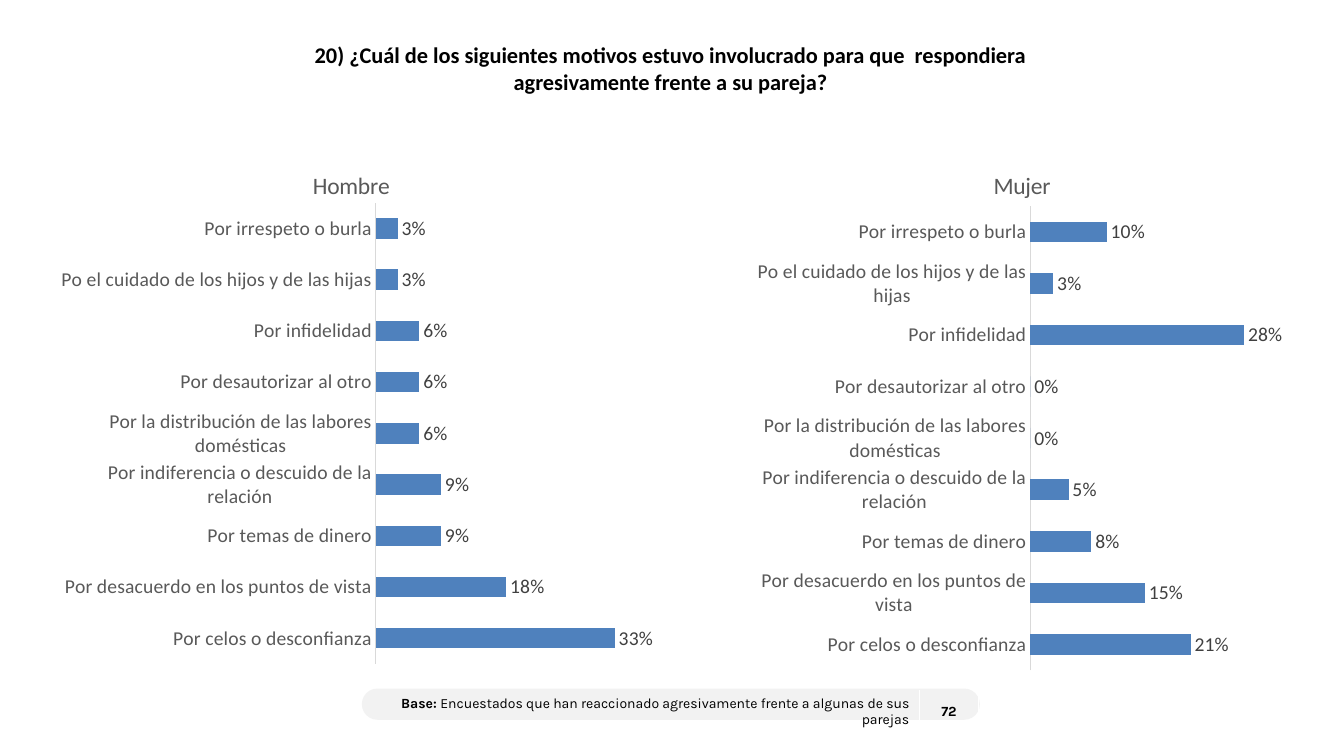
import dataclasses

import lxml.etree
import pptx
import pptx.chart.data
import pptx.dml.color
import pptx.enum.chart
import pptx.enum.shapes
import pptx.enum.text
import pptx.oxml
import pptx.oxml.ns
import pptx.util

Pt = pptx.util.Pt
qn = pptx.oxml.ns.qn
ALIGN = pptx.enum.text.PP_ALIGN

REASONS = (
    "Por celos o desconfianza",
    "Por desacuerdo en los puntos de vista",
    "Por temas de dinero",
    "Por indiferencia o descuido de la relación",
    "Por la distribución de las labores domésticas",
    "Por desautorizar al otro",
    "Por infidelidad",
    "Po el cuidado de los hijos y de las hijas",
    "Por irrespeto o burla",
)


@dataclasses.dataclass
class GenderChart:
    name: str
    left: float
    width: float
    values: tuple[float, ...]
    axis_max: float
    plot: tuple[float, float, float, float]  # x, y, w, h as shares of the chart


CHARTS = (
    GenderChart("Hombre", 30.2, 441.4,
                (0.33, 0.18, 0.09, 0.09, 0.06, 0.06, 0.06, 0.03, 0.03),
                0.35, (0.54, 0.1, 0.41, 0.86)),
    GenderChart("Mujer", 530.6, 398.9,
                (0.21, 0.15, 0.08, 0.05, 0, 0, 0.28, 0.03, 0.1),
                0.3, (0.515, 0.106, 0.41, 0.866)),
)


def rgb(value: str) -> pptx.dml.color.RGBColor:
    return pptx.dml.color.RGBColor.from_string(value)


def set_font(font, name: str, size: float, color: str, bold: bool = False) -> None:
    font.name = name
    font.size = Pt(size)
    font.bold = bold
    font.color.rgb = rgb(color)


def set_plot_layout(chart, plot: tuple[float, float, float, float]) -> None:
    """Fix the inner plot area at the given shares of the chart."""
    area = chart._chartSpace.chart.plotArea
    for old in area.findall(qn("c:layout")):
        area.remove(old)
    layout = lxml.etree.Element(qn("c:layout"))
    manual = lxml.etree.SubElement(layout, qn("c:manualLayout"))
    settings = [("layoutTarget", "inner"), ("xMode", "edge"), ("yMode", "edge")]
    settings += zip("xywh", map(str, plot))
    for tag, value in settings:
        lxml.etree.SubElement(manual, qn("c:" + tag)).set("val", value)
    area.insert(0, layout)


def add_gender_chart(s, spec_: GenderChart) -> None:
    data = pptx.chart.data.CategoryChartData(number_format="0%")
    data.categories = REASONS
    data.add_series(spec_.name, spec_.values)
    chart = s.shapes.add_chart(
        pptx.enum.chart.XL_CHART_TYPE.BAR_CLUSTERED,
        Pt(spec_.left), Pt(106.6), Pt(spec_.width), Pt(383), data).chart
    set_font(chart.font, "Calibri", 14, "000000")
    chart.has_legend = False

    chart.has_title = True
    chart.chart_title.include_in_layout = False
    p = chart.chart_title.text_frame.paragraphs[0]
    p.text = spec_.name
    set_font(p.runs[0].font, "Calibri", 16.8, "595959")

    reasons = chart.category_axis
    reasons.major_tick_mark = pptx.enum.chart.XL_TICK_MARK.NONE
    reasons.format.line.color.rgb = rgb("D9D9D9")
    reasons.format.line.width = Pt(0.75)
    set_font(reasons.tick_labels.font, "Calibri", 14, "595959")

    shares = chart.value_axis
    shares.visible = False
    shares.has_major_gridlines = False
    shares.minimum_scale = 0
    shares.maximum_scale = spec_.axis_max

    plot = chart.plots[0]
    plot.gap_width = 150
    plot.vary_by_categories = False
    fill = plot.series[0].format.fill
    fill.solid()
    fill.fore_color.rgb = rgb("4F81BD")
    plot.has_data_labels = True
    labels = plot.data_labels
    labels.show_value = True
    labels.number_format = "0%"
    labels.number_format_is_linked = False
    labels.position = pptx.enum.chart.XL_LABEL_POSITION.OUTSIDE_END
    set_font(labels.font, "Calibri", 14, "404040")
    set_plot_layout(chart, spec_.plot)


def set_borders(cell, white_sides: str) -> None:
    """Draw white lines on the listed sides and none on the others."""
    props = cell._tc.get_or_add_tcPr()
    for side in "LRTB":
        line = lxml.etree.SubElement(props, qn("a:ln" + side), w=str(Pt(1)))
        if side in white_sides:
            solid = lxml.etree.SubElement(line, qn("a:solidFill"))
            lxml.etree.SubElement(solid, qn("a:srgbClr"), val="FFFFFF")
        else:
            lxml.etree.SubElement(line, qn("a:noFill"))


def add_title(s) -> None:
    sp = s.shapes.title
    sp.left, sp.top, sp.width, sp.height = Pt(200), Pt(26), Pt(558), Pt(46)
    tf = sp.text_frame
    tf.text = ("20) ¿Cuál de los siguientes motivos estuvo involucrado para que  "
               "respondiera agresivamente frente a su pareja?")
    tf.word_wrap = True
    tf.auto_size = pptx.enum.text.MSO_AUTO_SIZE.NONE
    tf.vertical_anchor = pptx.enum.text.MSO_ANCHOR.TOP
    p = tf.paragraphs[0]
    p.alignment = ALIGN.CENTER
    set_font(p.runs[0].font, "Calibri", 16, "000000", True)


def add_footer(s) -> None:
    pill = s.shapes.add_shape(pptx.enum.shapes.MSO_SHAPE.ROUNDED_RECTANGLE,
                              Pt(258.5), Pt(491.8), Pt(441.4), Pt(22.3))
    pill.adjustments[0] = 0.5
    pill.shadow.inherit = False
    pill.fill.solid()
    pill.fill.fore_color.rgb = rgb("F2F2F2")
    pill.line.fill.background()

    widths = (388.8, 42.5)
    table = s.shapes.add_table(1, 2, Pt(267.8), Pt(493.2),
                               Pt(sum(widths)), Pt(19.4)).table
    table.first_row = table.horz_banding = False
    for column, width in zip(table.columns, widths):
        column.width = Pt(width)

    base, page = table.cell(0, 0), table.cell(0, 1)
    base_runs = (("Base: ", True),
                 ("Encuestados que han reaccionado agresivamente frente "
                  "a algunas de sus parejas", False))
    for cell, runs, align, sides in ((base, base_runs, ALIGN.RIGHT, "R"),
                                     (page, (("72", True),), ALIGN.CENTER, "LR")):
        set_borders(cell, sides)
        cell.fill.background()
        cell.vertical_anchor = pptx.enum.text.MSO_ANCHOR.MIDDLE
        p = cell.text_frame.paragraphs[0]
        p.alignment = align
        for text, bold in runs:
            r = p.add_run()
            r.text = text
            set_font(r.font, "Karla", 10, "000000", bold)


def main() -> None:
    prs = pptx.Presentation()
    prs.slide_width, prs.slide_height = Pt(960), Pt(540)
    s = prs.slides.add_slide(prs.slide_layouts[5])
    add_title(s)
    add_footer(s)
    for gender in CHARTS:
        add_gender_chart(s, gender)
    prs.save("out.pptx")


if __name__ == "__main__":
    main()
